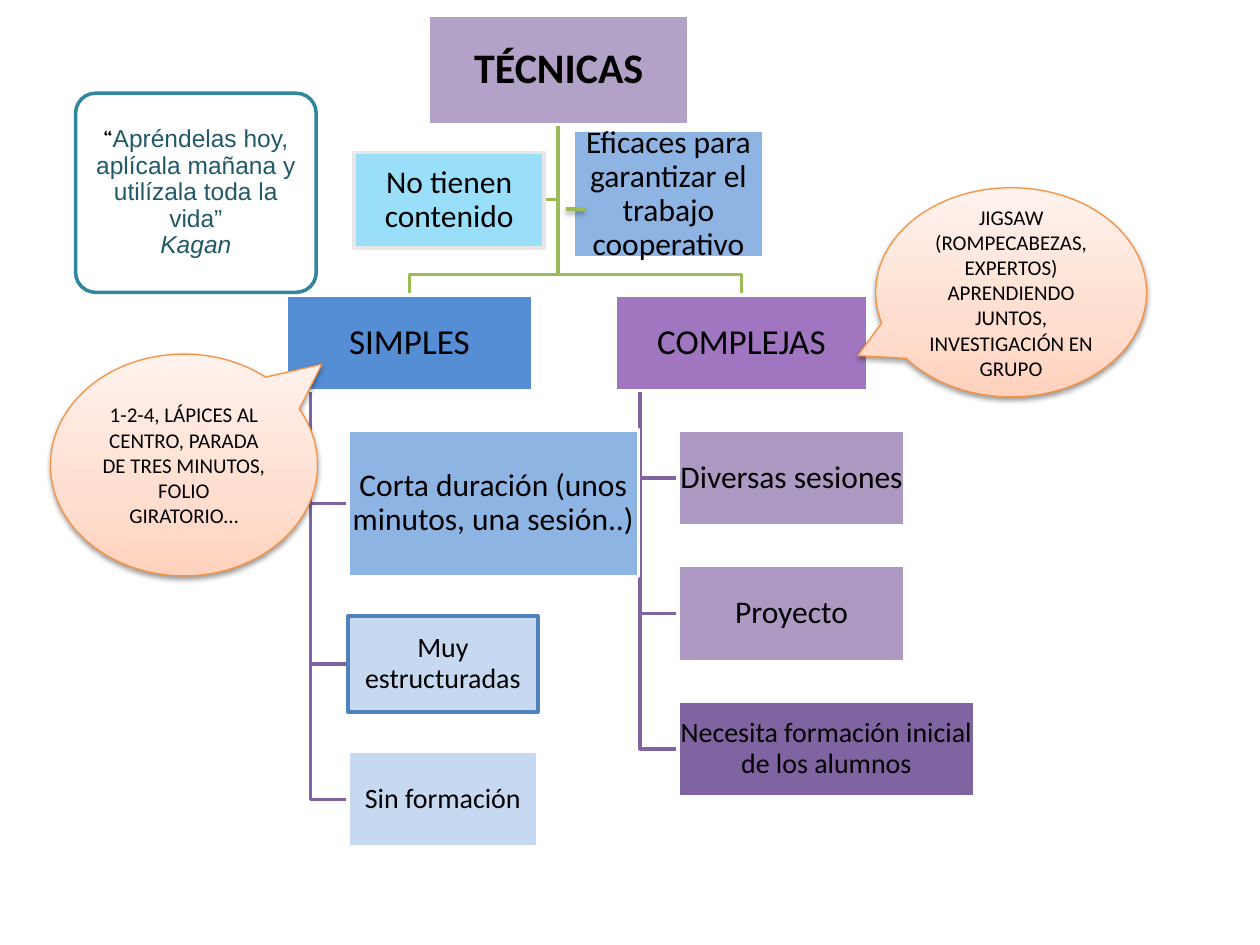
"""Build the diagram of simple and complex cooperative learning techniques."""
from copy import deepcopy

from lxml.etree import SubElement
from pptx import Presentation
from pptx.dml.color import RGBColor
from pptx.enum.shapes import MSO_CONNECTOR, MSO_SHAPE
from pptx.enum.text import MSO_ANCHOR, PP_ALIGN
from pptx.oxml import parse_xml
from pptx.oxml.ns import nsdecls, qn
from pptx.util import Inches, Pt


class Theme:
    body, quote_mark, quote = "Calibri", "Cambria", "Arial"
    title_size, branch_size, leaf_size, small_size = 24, 20, 18, 16
    quote_size, example_size = 14, 12
    ink, quote_ink = "000000", "215968"
    white, pale_edge, blue_edge, teal = "FFFFFF", "E7E7E7", "4F81BD", "31859C"
    green, purple, orange = "9BBB59", "8064A2", "F69240"
    lilac, blue, sky, ice = "B3A2C7", "558ED5", "8EB4E3", "C6D9F1"
    violet, cyan = "7030A0", "00B0F0"
    peach = [(0, "FFD2BD"), (0.35, "FFDED0"), (1, "FFF2ED")]
    stroke, thin = 2, 0.75


prs = Presentation()
prs.slide_width, prs.slide_height = Inches(10), Inches(7.5)
slide = prs.slides.add_slide(prs.slide_layouts[6])
col, row = prs.slide_width / 100, prs.slide_height / 100
SHADOW = (
    f'<a:outerShdw {nsdecls("a")} blurRad="40000" dist="20000" dir="5400000" rotWithShape="0">'
    '<a:srgbClr val="000000"><a:alpha val="38000"/></a:srgbClr></a:outerShdw>'
)


def place(preset, frame, fill, opacity, edge, width=Theme.stroke):
    left, top, wide, high = frame
    shape = slide.shapes.add_shape(
        preset, round(left * col), round(top * row), round(wide * col), round(high * row))
    shape.shadow.inherit = False
    shape.fill.solid()
    shape.fill.fore_color.rgb = RGBColor.from_string(fill)
    if opacity < 100:
        tint = shape._element.spPr.find(qn("a:solidFill"))[0]
        SubElement(tint, qn("a:alpha"), val=str(opacity * 1000))
    shape.line.color.rgb = RGBColor.from_string(edge)
    shape.line.width = Pt(width)
    return shape


def write(shape, lines, size, insets, spacing=0.9):
    frame = shape.text_frame
    frame.word_wrap = True
    frame.vertical_anchor = MSO_ANCHOR.MIDDLE
    frame.margin_left = frame.margin_right = Inches(insets[0])
    frame.margin_top = frame.margin_bottom = Inches(insets[1])
    for index, runs in enumerate(lines):
        paragraph = frame.add_paragraph() if index else frame.paragraphs[0]
        paragraph.alignment = PP_ALIGN.CENTER
        paragraph.line_spacing = spacing
        for text, face, color, bold, italic in runs:
            run = paragraph.add_run()
            run.text = text
            run.font.name, run.font.size = face, Pt(size)
            run.font.bold, run.font.italic = bold, italic
            run.font.color.rgb = RGBColor.from_string(color)


trunk, title_bottom, bus, branch_top = 44.3, 13.1, 29.07, 31.2
box_height, gap = 10.13, 4.2

branches = [
    ("SIMPLES", 22.7, 19.6, Theme.blue, 100, [
        ("Corta duración (unos minutos, una sesión..)", 23.1, 15.47, Theme.sky, 100,
         Theme.white, Theme.leaf_size),
        ("Muy estructuradas", 15.1, box_height, Theme.ice, 100,
         Theme.blue_edge, Theme.small_size),
        ("Sin formación", 15.1, box_height, Theme.ice, 100,
         Theme.white, Theme.small_size),
    ]),
    ("COMPLEJAS", 48.8, 20.1, Theme.violet, 66, [
        ("Diversas sesiones", 18, box_height, Theme.purple, 65,
         Theme.white, Theme.leaf_size),
        ("Proyecto", 18, box_height, Theme.purple, 65,
         Theme.white, Theme.leaf_size),
        ("Necesita formación inicial de los alumnos", 23.5, box_height, Theme.purple, 100,
         Theme.white, Theme.small_size),
    ]),
]

boxes = [("TÉCNICAS", (34, 1.6, 20.7, 11.6), Theme.lilac, 100, Theme.white, Theme.title_size)]
links = [(Theme.green, [(trunk, title_bottom), (trunk, 21.1), (43.2, 21.1)])]
for name, left, width, fill, opacity, leaves in branches:
    boxes.append((name, (left, branch_top, width, box_height), fill, opacity,
                  Theme.white, Theme.branch_size))
    center = left + width / 2
    links.append((Theme.green, [(trunk, title_bottom), (trunk, bus),
                                (center, bus), (center, branch_top)]))
    spine, leaf_left = left + width * 0.1, left + width * 0.25
    branch_bottom = branch_top + box_height
    top = branch_bottom + gap
    for trait, wide, high, leaf_fill, leaf_opacity, edge, size in leaves:
        boxes.append((trait, (leaf_left, top, wide, high), leaf_fill, leaf_opacity, edge, size))
        middle = top + high / 2
        links.append((Theme.purple, [(spine, branch_bottom), (spine, middle),
                                     (leaf_left, middle)]))
        top += high + gap
boxes += [
    ("No tienen contenido", (28.1, 16.13, 15.1, box_height), Theme.cyan, 40,
     Theme.pale_edge, Theme.leaf_size),
    ("Eficaces para garantizar el trabajo cooperativo", (45.5, 13.73, 15.1, 13.6), Theme.sky, 100,
     Theme.white, Theme.leaf_size),
]

for color, corners in links:
    points = [(round(x * col), round(y * row)) for x, y in corners]
    builder = slide.shapes.build_freeform(*points[0])
    builder.add_line_segments(points[1:], close=False)
    link = builder.convert_to_shape()
    link.shadow.inherit = False
    link.fill.background()
    link.line.color.rgb = RGBColor.from_string(color)
    link.line.width = Pt(Theme.stroke)

for text, frame, fill, opacity, edge, size in boxes:
    box = place(MSO_SHAPE.RECTANGLE, frame, fill, opacity, edge)
    write(box, [[(text, Theme.body, Theme.ink, size == Theme.title_size, False)]],
          size, (0.01, 0.01))

quote = place(MSO_SHAPE.ROUNDED_RECTANGLE, (6, 9.87, 19.1, 21.07), Theme.white, 90, Theme.teal)
quote.adjustments[0] = 0.1
write(quote, [
    [("“", Theme.quote_mark, Theme.ink, False, False),
     ("Apréndelas hoy, aplícala mañana y utilízala toda la vida”",
      Theme.quote, Theme.quote_ink, False, False)],
    [("Kagan", Theme.quote, Theme.quote_ink, False, True)],
], Theme.quote_size, (0.05, 0.05))

examples = [
    ("JIGSAW (ROMPECABEZAS, EXPERTOS) APRENDIENDO JUNTOS, INVESTIGACIÓN EN GRUPO",
     (69.5, 19.87, 21.5, 22.13), (-0.566, 0.303)),
    ("1-2-4, LÁPICES AL CENTRO, PARADA DE TRES MINUTOS, FOLIO GIRATORIO…",
     (4, 37.47, 21.2, 23.47), (0.516, -0.454)),
]
for text, frame, tip in examples:
    example = place(MSO_SHAPE.OVAL_CALLOUT, frame, Theme.white, 100, Theme.orange, Theme.thin)
    example.adjustments[0], example.adjustments[1] = tip
    example.fill.gradient()
    example.fill.gradient_angle = 90
    properties = example._element.spPr
    shades = properties.find(qn("a:gradFill")).find(qn("a:gsLst"))
    shades.append(deepcopy(shades[0]))
    for stop, (position, color) in zip(example.fill.gradient_stops, Theme.peach):
        stop.position = position
        stop.color.rgb = RGBColor.from_string(color)
    properties.find(qn("a:effectLst")).append(parse_xml(SHADOW))
    write(example, [[(text, Theme.body, Theme.ink, False, False)]],
          Theme.example_size, (0.1, 0.05), 1.0)

dash_y = round(22.13 * row)
dash = slide.shapes.add_connector(
    MSO_CONNECTOR.STRAIGHT, round(44.9 * col), dash_y, round(46.4 * col), dash_y)
dash.line.color.rgb = RGBColor.from_string(Theme.green)
dash.line.width = Pt(Theme.stroke)
SubElement(dash._element.spPr, qn("a:effectLst")).append(parse_xml(SHADOW))

prs.save("out.pptx")
